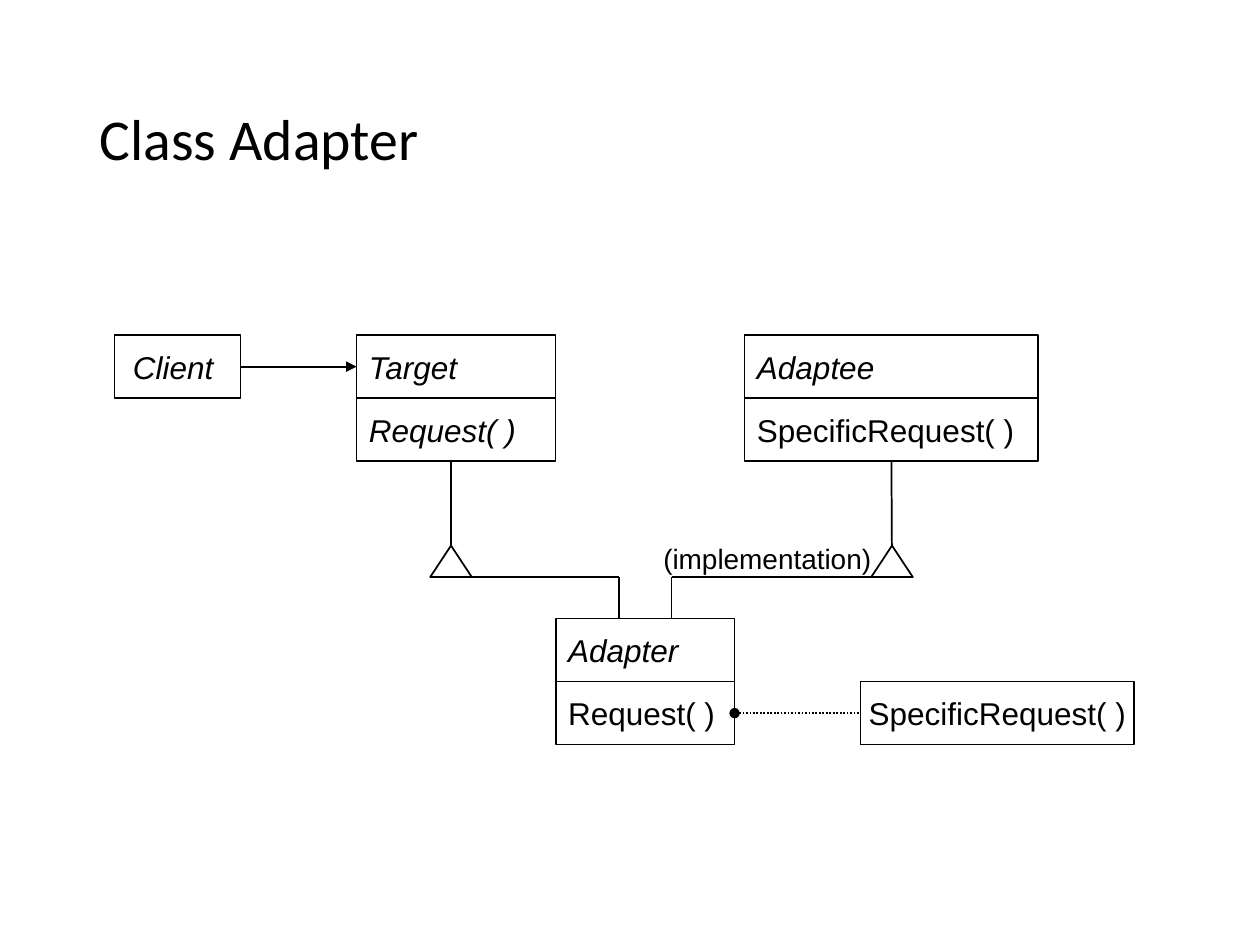
from lxml import etree
from pptx import Presentation
from pptx.dml.color import RGBColor
from pptx.enum.dml import MSO_LINE
from pptx.enum.shapes import MSO_CONNECTOR, MSO_SHAPE
from pptx.enum.text import MSO_ANCHOR, MSO_AUTO_SIZE, PP_ALIGN
from pptx.oxml.ns import qn
from pptx.util import Inches, Pt

RECT, TRI = MSO_SHAPE.RECTANGLE, MSO_SHAPE.ISOSCELES_TRIANGLE
STRAIGHT, DOTS = MSO_CONNECTOR.STRAIGHT, MSO_LINE.ROUND_DOT
LEFT, CENTER = PP_ALIGN.LEFT, PP_ALIGN.CENTER
MIDDLE, FIXED = MSO_ANCHOR.MIDDLE, MSO_AUTO_SIZE.NONE
BOTTOM, WEST, EAST = 2, 1, 3
COLORS = {"ink": "000000", "paper": "FFFFFF"}
ROW = 0.5


def color(name):
    """Return the named colour."""
    return RGBColor.from_string(COLORS[name])


def write(shape, text, size=18, font="Arial", italic=False, align=LEFT, wrap=True, gap=1.0):
    """Put formatted text into a shape."""
    frame = shape.text_frame
    frame.text = text
    frame.auto_size = FIXED
    frame.word_wrap = wrap
    frame.vertical_anchor = MIDDLE
    para = frame.paragraphs[0]
    para.alignment = align
    para.line_spacing = gap
    face = para.runs[0].font
    face.name, face.size, face.italic = font, Pt(size), italic
    face.color.rgb = color("ink")


def draw(slide, kind, x, y, w, h):
    """Add a white outlined shape."""
    shape = slide.shapes.add_shape(kind, Inches(x), Inches(y), Inches(w), Inches(h))
    shape.shadow.inherit = False
    shape.fill.solid()
    shape.fill.fore_color.rgb = color("paper")
    shape.line.color.rgb = color("ink")
    shape.line.width = Pt(1)
    return shape


def box(slide, x, y, w, text, **style):
    """Add one labelled row."""
    shape = draw(slide, RECT, x, y, w, ROW)
    write(shape, text, **style)
    return shape


def table(slide, x, y, w, name, method, italic=False):
    """Add a class with its name row above its method row."""
    head = box(slide, x, y, w, name, italic=True)
    return head, box(slide, x, y + ROW, w, method, italic=italic)


def link(slide, start, end, tail=None, head=None, dash=None, source=None, target=None):
    """Draw a line, joined to (shape, side) pairs where given."""
    line = slide.shapes.add_connector(STRAIGHT, *map(Inches, start + end))
    if source:
        line.begin_connect(*source)
    if target:
        line.end_connect(*target)
    line.line.color.rgb = color("ink")
    line.line.width = Pt(1)
    if dash:
        line.line.dash_style = dash
    pen = line.line._get_or_add_ln()
    for tag, kind in (("a:headEnd", head), ("a:tailEnd", tail)):
        if kind:
            etree.SubElement(pen, qn(tag), type=kind)
    etree.SubElement(line._element.spPr, qn("a:effectLst"))


def inherit(slide, x, top, turn, base, foot, source=None):
    """Draw an inheritance path from a parent down to its child."""
    link(slide, (x, top), (x, base), source=source)
    link(slide, (x, base), (turn, base))
    link(slide, (turn, base), (turn, foot))
    w, h = 0.33, 0.25
    draw(slide, TRI, x - w / 2, base - h, w, h)


def heading(slide, x, y, w, h):
    """Place the title."""
    title = slide.shapes.title
    title.left, title.top, title.width, title.height = map(Inches, (x, y, w, h))
    write(title, "Class Adapter", size=33, font="Calibri", gap=0.9)


def diagram(slide, x, y):
    """Draw the class diagram from its top left corner."""
    client = box(slide, x, y, 1, "Client ", italic=True, align=CENTER, wrap=False)
    target, request = table(slide, x + 1.92, y, 1.58, "Target", "Request( )", italic=True)
    adaptee, service = table(slide, x + 5, y, 2.33, "Adaptee", "SpecificRequest( )")
    foot = y + 2.25
    adapter, method = table(slide, x + 3.5, foot, 1.42, "Adapter", "Request( )")
    call = box(slide, x + 5.92, foot + ROW, 2.17, "SpecificRequest( )", align=CENTER, wrap=False)

    mid = y + ROW / 2
    link(slide, (x + 1, mid), (x + 1.92, mid), tail="triangle",
         source=(client, EAST), target=(target, WEST))
    low = foot + 1.5 * ROW
    link(slide, (x + 4.92, low), (x + 5.92, low), head="oval", dash=DOTS,
         source=(method, EAST), target=(call, WEST))

    top, base = y + 2 * ROW, y + 1.92
    inherit(slide, x + 2.67, top, x + 4, base, foot)
    inherit(slide, x + 6.17, top, x + 4.42, base, foot, source=(service, BOTTOM))
    note = slide.shapes.add_textbox(Inches(x + 4.25), Inches(y + 1.59), Inches(1.86), Inches(0.37))
    write(note, "(implementation)", size=16, align=CENTER, wrap=False)


def main():
    """Build and save the slide."""
    deck = Presentation()
    deck.slide_width, deck.slide_height = Inches(10), Inches(7.5)
    slide = deck.slides.add_slide(deck.slide_layouts.get_by_name("Title Only"))
    heading(slide, 0.69, 0.4, 8.62, 1.45)
    diagram(slide, 0.91, 2.66)
    deck.save("out.pptx")


if __name__ == "__main__":
    main()
